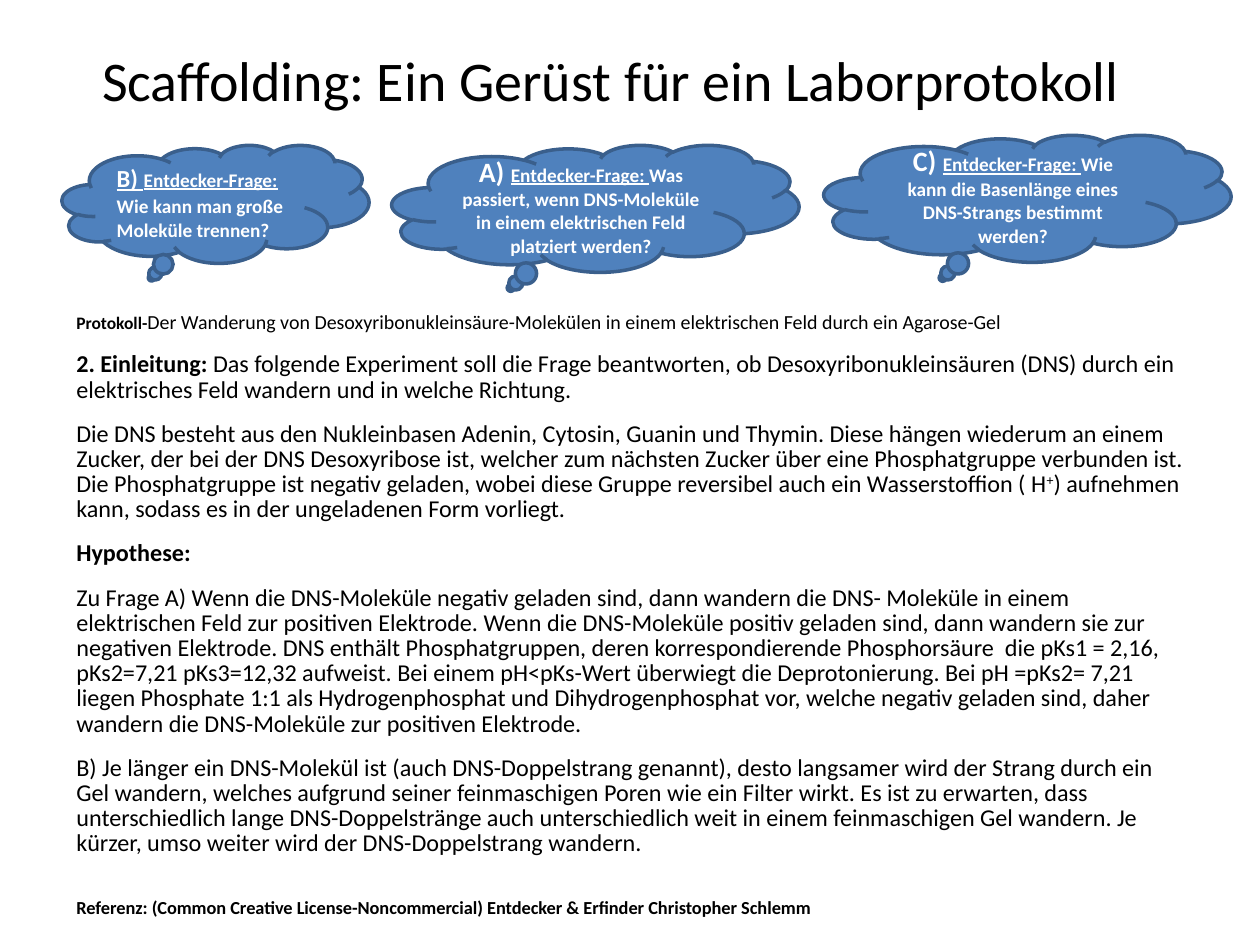
from dataclasses import dataclass

from pptx import Presentation
from pptx.dml.color import RGBColor
from pptx.enum.shapes import MSO_SHAPE
from pptx.enum.text import MSO_ANCHOR, PP_ALIGN
from pptx.util import Emu, Pt

PX_PER_INCH = 126
FONT = "Calibri"
BLACK = RGBColor(0x00, 0x00, 0x00)
WHITE = RGBColor(0xFF, 0xFF, 0xFF)
CLOUD_FILL = RGBColor(0x4F, 0x81, 0xBD)
CLOUD_LINE = RGBColor(0x3A, 0x5F, 0x8C)


@dataclass(frozen=True)
class Span:
    text: str
    size: float = 13.8
    bold: bool = False
    underline: bool = False
    raised: bool = False


@dataclass(frozen=True)
class Box:
    left: int
    top: int
    width: int
    height: int


@dataclass(frozen=True)
class Question:
    box: Box
    letter: Span
    text: str
    align: PP_ALIGN = PP_ALIGN.CENTER
    line_spacing: float = 1.0


def px(length: int) -> Emu:
    return Emu(round(length * 914400 / PX_PER_INCH))


def place(box: Box) -> tuple:
    return px(box.left), px(box.top), px(box.width), px(box.height)


def write(paragraph, spans: list[Span], color: RGBColor = BLACK) -> None:
    for span in spans:
        run = paragraph.add_run()
        run.text = span.text
        font = run.font
        font.name, font.size = FONT, Pt(span.size)
        font.bold, font.underline = span.bold, span.underline
        font.color.rgb = color
        if span.raised:
            run._r.get_or_add_rPr().set("baseline", "30000")


def add_text(slide, box: Box, paragraphs: list[list[Span]]):
    frame = slide.shapes.add_textbox(*place(box)).text_frame
    frame.word_wrap = True
    for index, spans in enumerate(paragraphs):
        paragraph = frame.add_paragraph() if index else frame.paragraphs[0]
        write(paragraph, spans)
    return frame


def add_question(slide, question: Question) -> None:
    cloud = slide.shapes.add_shape(MSO_SHAPE.CLOUD_CALLOUT, *place(question.box))
    cloud.shadow.inherit = False
    cloud.fill.solid()
    cloud.fill.fore_color.rgb = CLOUD_FILL
    cloud.line.color.rgb = CLOUD_LINE
    cloud.line.width = Pt(2)
    frame = cloud.text_frame
    frame.word_wrap = True
    frame.vertical_anchor = MSO_ANCHOR.MIDDLE
    paragraph = frame.paragraphs[0]
    paragraph.alignment = question.align
    paragraph.line_spacing = question.line_spacing
    write(paragraph, [
        question.letter,
        Span("Entdecker-Frage: ", 11, bold=True, underline=True),
        Span(question.text, 11, bold=True),
    ], WHITE)


TITLE = "Scaffolding: Ein Gerüst für ein Laborprotokoll"

QUESTIONS = [
    Question(Box(392, 145, 407, 127), Span("A) ", 16, bold=True),
             "Was passiert, wenn DNS-Moleküle in einem elektrischen Feld platziert werden?"),
    Question(Box(62, 145, 307, 118), Span("B) ", 14, bold=True, underline=True),
             "Wie kann man große Moleküle trennen?", PP_ALIGN.LEFT, 1.07),
    Question(Box(824, 135, 407, 127), Span("C) ", 16, bold=True),
             "Wie kann die Basenlänge eines DNS-Strangs bestimmt werden?"),
]

PROTOCOL = [
    [Span("Protokoll-", 10, bold=True),
     Span("Der Wanderung von Desoxyribonukleinsäure-Molekülen in einem elektrischen "
          "Feld durch ein Agarose-Gel", 11.4)],
    [Span("2. Einleitung: ", bold=True),
     Span("Das folgende Experiment soll die Frage beantworten, ob Desoxyribonukleinsäuren "
          "(DNS) durch ein elektrisches Feld wandern und in welche Richtung.")],
    [Span("Die DNS besteht aus den Nukleinbasen Adenin, Cytosin, Guanin und Thymin. Diese "
          "hängen wiederum an einem Zucker, der bei der DNS Desoxyribose ist, welcher zum "
          "nächsten Zucker über eine Phosphatgruppe verbunden ist. Die Phosphatgruppe ist "
          "negativ geladen, wobei diese Gruppe reversibel auch ein Wasserstoffion ( H"),
     Span("+", raised=True),
     Span(") aufnehmen kann, sodass es in der ungeladenen Form vorliegt.")],
    [Span("Hypothese:", bold=True)],
    [Span("Zu Frage A) Wenn die DNS-Moleküle negativ geladen sind, dann wandern die DNS- "
          "Moleküle in einem elektrischen Feld zur positiven Elektrode. Wenn die "
          "DNS-Moleküle positiv geladen sind, dann wandern sie zur negativen Elektrode. "
          "DNS enthält Phosphatgruppen, deren korrespondierende Phosphorsäure  die pKs1 = "
          "2,16, pKs2=7,21 pKs3=12,32 aufweist. Bei einem pH<pKs-Wert überwiegt die "
          "Deprotonierung. Bei pH =pKs2= 7,21 liegen Phosphate 1:1 als Hydrogenphosphat "
          "und Dihydrogenphosphat vor, welche negativ geladen sind, daher wandern die "
          "DNS-Moleküle zur positiven Elektrode.")],
    [Span("B) Je länger ein DNS-Molekül ist (auch DNS-Doppelstrang genannt), desto "
          "langsamer wird der Strang durch ein Gel wandern, welches aufgrund seiner "
          "feinmaschigen Poren wie ein Filter wirkt. Es ist zu erwarten, dass "
          "unterschiedlich lange DNS-Doppelstränge auch unterschiedlich weit in einem "
          "feinmaschigen Gel wandern. Je kürzer, umso weiter wird der DNS-Doppelstrang "
          "wandern.")],
]

REFERENCE = ("Referenz: (Common Creative License-Noncommercial) "
             "Entdecker & Erfinder Christopher Schlemm")


def main() -> None:
    deck = Presentation()
    deck.slide_width, deck.slide_height = px(1260), px(945)
    slide = deck.slides.add_slide(deck.slide_layouts[6])

    # Title
    title = add_text(slide, Box(44, 0, 1134, 158), [[Span(TITLE, 32)]])
    title.vertical_anchor = MSO_ANCHOR.MIDDLE
    title.paragraphs[0].alignment = PP_ALIGN.CENTER

    # Lab protocol
    protocol = add_text(slide, Box(64, 307, 1134, 570), PROTOCOL)
    for index, paragraph in enumerate(protocol.paragraphs):
        paragraph.line_spacing = 0.87
        paragraph.space_before = Pt(2.8 if index else 0)
        paragraph.space_after = Pt(8)

    # Reference
    add_text(slide, Box(64, 890, 963, 35), [[Span(REFERENCE, 10.5, bold=True)]])

    # Question clouds
    for question in QUESTIONS:
        add_question(slide, question)

    deck.save("out.pptx")


if __name__ == "__main__":
    main()
